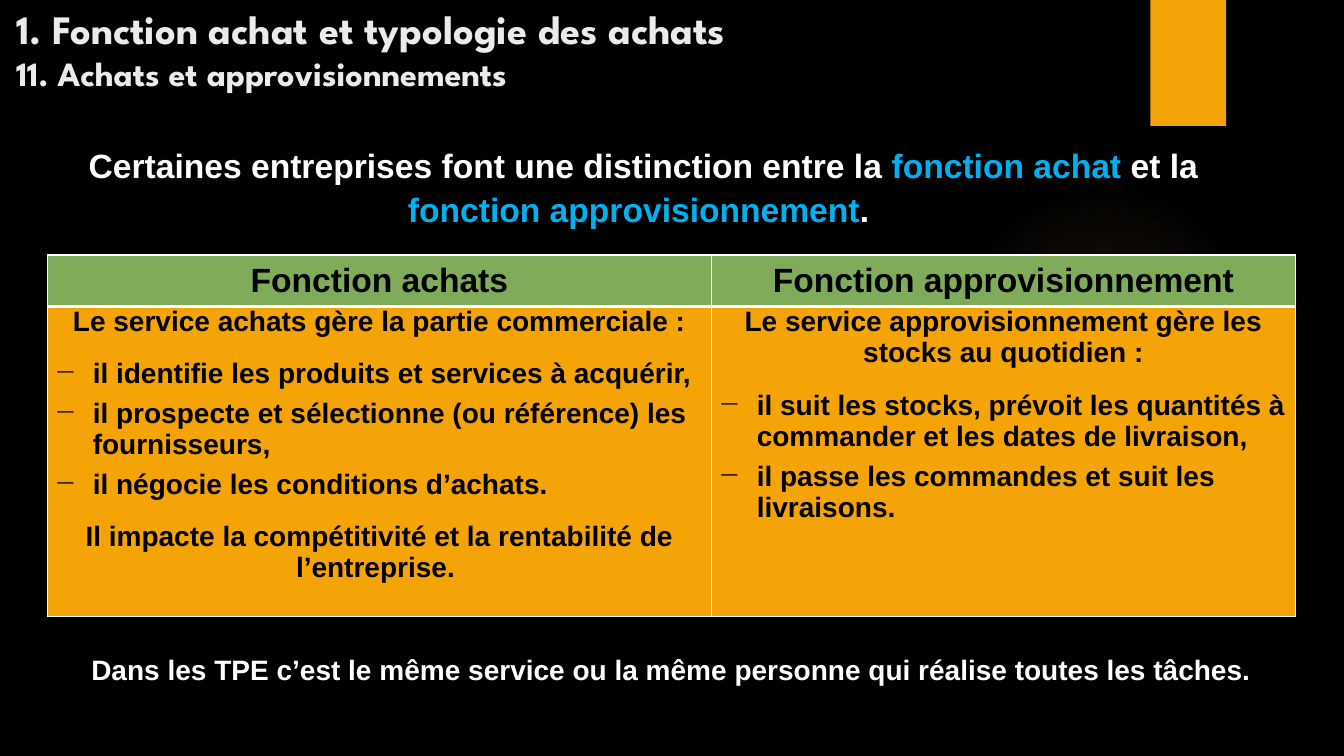
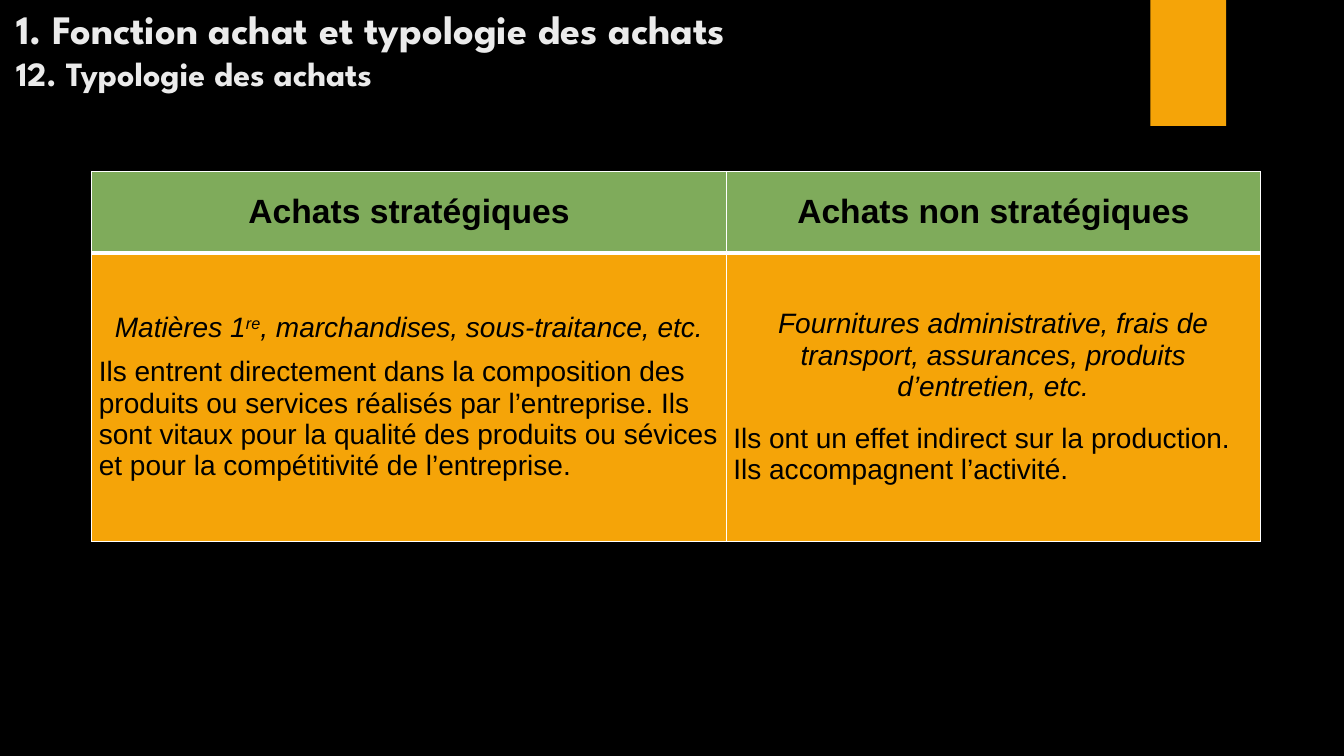
from lxml import etree
from pptx import Presentation
from pptx.dml.color import RGBColor
from pptx.enum.shapes import MSO_SHAPE
from pptx.enum.text import MSO_ANCHOR, MSO_AUTO_SIZE, PP_ALIGN
from pptx.oxml import parse_xml
from pptx.oxml.ns import qn
from pptx.util import Inches, Pt

LEFT, MID = PP_ALIGN.LEFT, PP_ALIGN.CENTER
TOP, CORE, LOW = MSO_ANCHOR.TOP, MSO_ANCHOR.MIDDLE, MSO_ANCHOR.BOTTOM
RECT, OVAL = MSO_SHAPE.RECTANGLE, MSO_SHAPE.OVAL
FIXED = MSO_AUTO_SIZE.NONE
WIDE, HIGH = Inches(13.33), Inches(7.5)
NS = "http://schemas.openxmlformats.org/drawingml/2006/main"
HEX = {
    "back": "000000",
    "ink": "000000",
    "pale": "FFFFFF",
    "title": "EBEBEB",
    "gold": "F5A408",
    "glow": "FAC96A",
    "green": "7FAB5B",
    "blue": "00B0F0",
}
TOPIC = "1. Fonction achat et typologie des achats"


def tint(name):
    return RGBColor.from_string(HEX[name])


def area(left, top, width, height):
    return [int(side * share / 100) for side, share in
            ((WIDE, left), (HIGH, top), (WIDE, width), (HIGH, height))]


def item(text, align=LEFT, before=3, after=3, **look):
    return dict(text=text, align=align, before=before, after=after, **look)


def dash(para):
    props = para._p.get_or_add_pPr()
    props.set("marL", str(Inches(0.38)))
    props.set("indent", str(-Inches(0.38)))
    etree.SubElement(props, qn("a:buChar")).set("char", "−")


def write(frame, items, size, color="ink", bold=True, lead=1.0):
    frame.word_wrap = True
    for num, spec in enumerate(items):
        para = frame.add_paragraph() if num else frame.paragraphs[0]
        para.alignment = spec["align"]
        para.line_spacing = lead
        para.space_before = Pt(spec["before"] if num else 0)
        para.space_after = Pt(spec["after"])
        if spec.get("dash"):
            dash(para)
        font = para.font
        font.name, font.size = "Arial", Pt(size)
        font.bold, font.italic = bold, spec.get("slant", False)
        font.color.rgb = tint(color)
        text = spec["text"]
        for part, style in [(text, None)] if isinstance(text, str) else text:
            run = para.add_run()
            run.text = part
            if style == "super":
                run._r.get_or_add_rPr().set("baseline", "30000")
            elif style:
                run.font.color.rgb = tint(style)


def decor(slide):
    glow = slide.shapes.add_shape(OVAL, *area(70.59, 24.4, 23.1, 41.07))
    bar = slide.shapes.add_shape(RECT, *area(85.6, 0, 5.63, 16.67))
    for shape in (glow, bar):
        shape.shadow.inherit = False
        shape.line.fill.background()
    bar.fill.solid()
    bar.fill.fore_color.rgb = tint("gold")
    stops = "".join(
        f'<a:gs pos="{pos * 1000}"><a:srgbClr val="{HEX["glow"]}">'
        f'<a:alpha val="{alpha * 1000}"/></a:srgbClr></a:gs>'
        for pos, alpha in ((0, 7), (36, 6), (69, 0), (100, 0)))
    fade = parse_xml(
        f'<a:gradFill xmlns:a="{NS}" rotWithShape="1"><a:gsLst>{stops}</a:gsLst>'
        '<a:path path="circle"><a:fillToRect l="50000" t="50000" r="50000" '
        'b="50000"/></a:path></a:gradFill>')
    glow.fill.background()
    props = glow.element.spPr
    props.replace(props.find(qn("a:noFill")), fade)
    tree = slide.slide_layout.shapes.element
    tree.insert(2, glow.element)
    tree.insert(3, bar.element)


def heading(slide, sub):
    title = slide.shapes.title
    title.left, title.top, title.width, title.height = area(0.45, 0, 72.39, 13.07)
    frame = title.text_frame
    frame.word_wrap, frame.auto_size = True, FIXED
    frame.vertical_anchor = LOW
    para = frame.paragraphs[0]
    para.alignment, para.space_before = LEFT, Pt(0)
    para.font.name, para.font.bold = "League Spartan", True
    para.font.color.rgb = tint("title")
    for num, (text, size) in enumerate(((TOPIC, 28.8), (sub, 24.3))):
        if num:
            para.add_line_break()
        run = para.add_run()
        run.text, run.font.size = text, Pt(size)


def note(slide, box, spec, size):
    frame = slide.shapes.add_textbox(*box).text_frame
    write(frame, [spec], size, "pale", lead=1.1)


def edges(cell, **widths):
    props = cell._tc.get_or_add_tcPr()
    for num, side in enumerate("LRTB"):
        line = parse_xml(
            f'<a:ln{side} xmlns:a="{NS}" w="{Pt(widths.get(side, 1))}"><a:solidFill>'
            f'<a:srgbClr val="{HEX["pale"]}"/></a:solidFill></a:ln{side}>')
        props.insert(num, line)


def fill(cell, items, color, size, bold, anchor):
    cell.margin_left = cell.margin_right = Inches(0.07)
    cell.margin_top = cell.margin_bottom = 0
    cell.vertical_anchor = anchor
    cell.fill.solid()
    cell.fill.fore_color.rgb = tint(color)
    write(cell.text_frame, items, size, bold=bold)


def grid(slide, box, split, cut, heads, bodies, bold, anchor):
    table = slide.shapes.add_table(2, 2, *box).table
    table.first_row = table.horz_banding = False
    for num, share in enumerate((split, 100 - split)):
        table.columns[num].width = int(box[2] * share / 100)
    for num, share in enumerate((cut, 100 - cut)):
        table.rows[num].height = int(box[3] * share / 100)
    for col, (head, body) in enumerate(zip(heads, bodies)):
        upper, lower = table.cell(0, col), table.cell(1, col)
        fill(upper, [item(head, MID)], "green", 24, True, CORE)
        fill(lower, body, "gold", 20, bold, anchor)
        edges(upper, B=3)
        edges(lower, T=3)


def roles(slide):
    heading(slide, "11. Achats et approvisionnements")
    buy = [
        item("Le service achats gère la partie commerciale :", MID),
        item("il identifie les produits et services à acquérir,", before=12, dash=True),
        item("il prospecte et sélectionne (ou référence) les fournisseurs,", dash=True),
        item("il négocie les conditions d’achats.", dash=True),
        item("Il impacte la compétitivité et la rentabilité de l’entreprise. ", MID, 12),
    ]
    stock = [
        item("Le service approvisionnement gère les stocks au quotidien :", MID),
        item("il suit les stocks, prévoit les quantités à commander et les dates "
             "de livraison,", before=12, dash=True),
        item("il passe les commandes et suit les livraisons.", dash=True),
    ]
    grid(slide, area(3.53, 33.73, 92.87, 47.87), 53.2, 14.2,
         ("Fonction achats", "Fonction approvisionnement"), (buy, stock), True, TOP)
    intro = [
        ("Certaines entreprises font une distinction entre la ", None),
        ("fonction achat ", "blue"),
        ("et la ", None),
        ("fonction approvisionnement", "blue"),
        (". ", None),
    ]
    note(slide, area(2.7, 18, 90.32, 12.13), item(intro, MID, after=6), 24)
    note(slide, area(3.53, 85.2, 92.87, 5.87),
         item("Dans les TPE c’est le même service ou la même personne qui réalise "
              "toutes les tâches.", MID, after=0), 20)


def types(slide):
    heading(slide, "12. Typologie des achats")
    core = [
        item([("Matières 1", None), ("re", "super"),
              (", marchandises, sous-traitance, etc.", None)], MID, slant=True),
        item("Ils entrent directement dans la composition des produits ou services "
             "réalisés par l’entreprise. Ils sont vitaux pour la qualité des produits "
             "ou sévices et pour la compétitivité de l’entreprise.", before=6),
    ]
    side = [
        item("Fournitures administrative, frais de transport, assurances, produits "
             "d’entretien, etc.", MID, slant=True),
        item("Ils ont un effet indirect sur la production. Ils accompagnent "
             "l’activité.", before=12),
    ]
    grid(slide, area(6.83, 22.67, 86.95, 48.93), 54.3, 22,
         ("Achats stratégiques", "Achats non stratégiques"), (core, side), False, CORE)


def main():
    deck = Presentation()
    deck.slide_width, deck.slide_height = WIDE, HIGH
    back = deck.slide_master.background.fill
    back.solid()
    back.fore_color.rgb = tint("back")
    layout = deck.slide_layouts.get_by_name("Title Only")
    for num, build in enumerate((roles, types)):
        slide = deck.slides.add_slide(layout)
        if not num:
            decor(slide)
        build(slide)
    deck.save("out.pptx")


if __name__ == "__main__":
    main()
